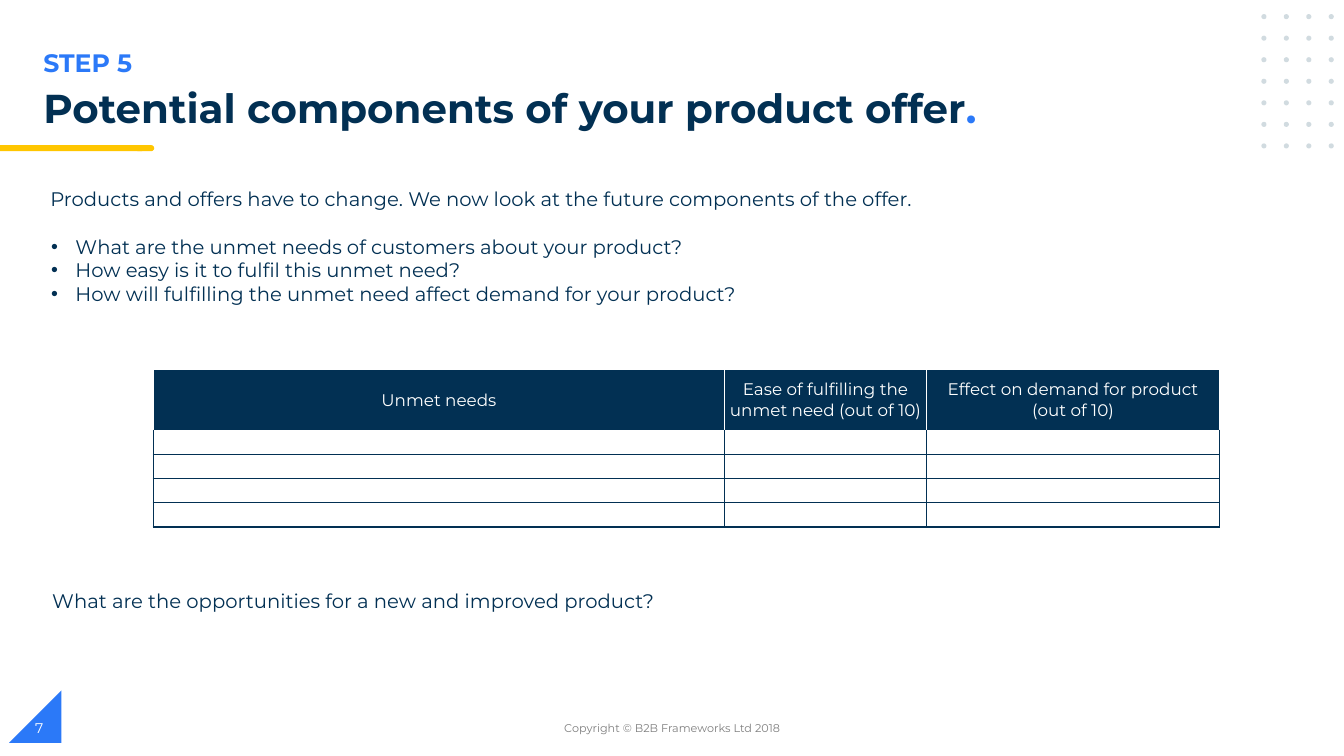
from dataclasses import dataclass
from itertools import product

from lxml import etree
from pptx import Presentation
from pptx import util as u
from pptx.dml.color import RGBColor
from pptx.enum import shapes, text
from pptx.oxml import ns


@dataclass(frozen=True)
class Theme:
    font: str = "Montserrat"
    navy: str = "023053"
    blue: str = "2B79F8"
    yellow: str = "FFC600"
    dots: str = "D1DBE0"
    grey: str = "7F7F7F"
    white: str = "FFFFFF"
    title: float = 28.8
    step: float = 18
    body: float = 14
    header: float = 12
    number: float = 10
    copyright: float = 8


THEME = Theme()
WIDTH, HEIGHT = u.Inches(13.33), u.Inches(7.5)

STEP = "STEP 5"
TITLE = ("Potential components of your product offer", ".")
INTRO = "Products and offers have to change. We now look at the future components of the offer."
QUESTIONS = [
    "What are the unmet needs of customers about your product?",
    "How easy is it to fulfil this unmet need?",
    "How will fulfilling the unmet need affect demand for your product?",
]
HEADERS = [
    ["Unmet needs"],
    ["Ease of fulfilling the unmet need (out of 10)"],
    ["Effect on demand for product", "(out of 10)"],
]
CLOSING = "What are the opportunities for a new and improved product?"
COPYRIGHT = "Copyright © B2B Frameworks Ltd 2018"
NUMBER = "7"

PLACES = {
    "step": (2.48, 5.6, 50.17, 5.33),
    "title": (2.48, 10.93, 90.98, 7.47),
    "intro": (3, 24.13, 79.5, 17.07),
    "table": (11.4, 48.8, 79.36, 20.93),
    "closing": (3.15, 77.2, 67.73, 4.53),
    "copyright": (33.15, 93.6, 33.75, 5.33),
    "number": (1.88, 93.6, 22.5, 5.33),
    "corner": (0.68, 91.33, 3.9, 6.93),
    "rule_end": (10.05, 19.2, 1.43, 0.8),
    "rule": (0, 19.2, 10.58, 0.8),
}
COLUMN_SHARES = (42.53, 15, 21.83)
ROW_SHARES = (8.13, 3.2, 3.2, 3.2, 3.2)
DOT_COLUMNS, DOT_ROWS = 4, 7
DOT_START, DOT_PITCH, DOT_SIZE = (93.85, 1.87), (1.67, 2.85), (0.38, 0.67)


def across(share):
    return round(WIDTH * share / 100)


def down(share):
    return round(HEIGHT * share / 100)


def spot(place):
    left, top, width, height = place
    return across(left), down(top), across(width), down(height)


def assign(target, values):
    for key, value in values.items():
        setattr(target, key, value)


def write(paragraph, words, size, color, bold=False):
    run = paragraph.add_run()
    run.text = words
    assign(run.font, {"name": THEME.font, "size": u.Pt(size), "bold": bold})
    run.font.color.rgb = RGBColor.from_string(color)


def add_mark(slide, preset, place, color):
    mark = slide.shapes.add_shape(preset, *spot(place))
    mark.shadow.inherit = False
    mark.fill.solid()
    mark.fill.fore_color.rgb = RGBColor.from_string(color)
    mark.line.fill.background()
    return mark


def add_label(slide, part, words, size, color, bold=False, middle=False, align=None):
    frame = slide.shapes.add_textbox(*spot(PLACES[part])).text_frame
    anchor = text.MSO_ANCHOR.MIDDLE if middle else text.MSO_ANCHOR.TOP
    assign(frame, {"word_wrap": True, "vertical_anchor": anchor})
    frame.paragraphs[0].alignment = align
    write(frame.paragraphs[0], words, size, color, bold)
    return frame


def add_bullet(paragraph):
    properties = paragraph._p.get_or_add_pPr()
    properties.set("marL", str(u.Inches(0.25)))
    properties.set("indent", str(u.Inches(-0.24)))
    color = etree.SubElement(properties, ns.qn("a:buClr"))
    etree.SubElement(color, ns.qn("a:srgbClr"), val=THEME.navy)
    etree.SubElement(properties, ns.qn("a:buFont"), typeface="Arial")
    etree.SubElement(properties, ns.qn("a:buChar"), char="•")


def add_borders(cell, colors):
    properties = cell._tc.get_or_add_tcPr()
    for side, color in zip("LRTB", colors):
        line = etree.SubElement(properties, ns.qn(f"a:ln{side}"), w=str(u.Pt(1)))
        fill = etree.SubElement(line, ns.qn("a:solidFill"))
        etree.SubElement(fill, ns.qn("a:srgbClr"), val=color)


def add_decoration(slide):
    corner = add_mark(slide, shapes.MSO_SHAPE.RIGHT_TRIANGLE, PLACES["corner"], THEME.blue)
    corner._element.spPr.find(ns.qn("a:xfrm")).set("flipH", "1")
    for row, column in product(range(DOT_ROWS), range(DOT_COLUMNS)):
        left = DOT_START[0] + column * DOT_PITCH[0]
        top = DOT_START[1] + row * DOT_PITCH[1]
        add_mark(slide, shapes.MSO_SHAPE.OVAL, (left, top, *DOT_SIZE), THEME.dots)
    add_mark(slide, shapes.MSO_SHAPE.FLOWCHART_TERMINATOR, PLACES["rule_end"], THEME.yellow)
    add_mark(slide, shapes.MSO_SHAPE.RECTANGLE, PLACES["rule"], THEME.yellow)


def add_title(slide):
    title = slide.shapes.title
    assign(title, dict(zip(("left", "top", "width", "height"), spot(PLACES["title"]))))
    assign(title.text_frame, {
        "word_wrap": True,
        "auto_size": text.MSO_AUTO_SIZE.NONE,
        "vertical_anchor": text.MSO_ANCHOR.MIDDLE,
    })
    heading = title.text_frame.paragraphs[0]
    assign(heading, {"alignment": text.PP_ALIGN.LEFT, "line_spacing": 0.9})
    for words, color in zip(TITLE, (THEME.navy, THEME.blue)):
        write(heading, words, THEME.title, color, True)


def add_intro(slide):
    frame = add_label(slide, "intro", INTRO, THEME.body, THEME.navy)
    for index, question in enumerate(QUESTIONS):
        paragraph = frame.add_paragraph()
        add_bullet(paragraph)
        if index == 0:
            paragraph.space_before = u.Pt(17)
        write(paragraph, question, THEME.body, THEME.navy)


def add_needs(slide):
    size = len(ROW_SHARES), len(COLUMN_SHARES)
    needs = slide.shapes.add_table(*size, *spot(PLACES["table"])).table
    assign(needs, {"first_row": False, "horz_banding": False})
    for column, share in zip(needs.columns, COLUMN_SHARES):
        column.width = across(share)
    for row, share in zip(needs.rows, ROW_SHARES):
        row.height = down(share)
    for row, column in product(*map(range, size)):
        cell = needs.cell(row, column)
        edge = THEME.navy if row else THEME.white
        top = THEME.navy if row > 1 else THEME.white
        add_borders(cell, (edge, edge, top, edge))
        assign(cell, {
            "margin_left": u.Inches(0.01),
            "margin_right": u.Inches(0.01),
            "margin_top": u.Inches(0.01),
            "margin_bottom": 0,
            "vertical_anchor": text.MSO_ANCHOR.MIDDLE,
        })
        paragraph = cell.text_frame.paragraphs[0]
        if row:
            cell.fill.background()
            etree.SubElement(paragraph._p, ns.qn("a:endParaRPr"), sz=str(THEME.number * 100))
            continue
        cell.fill.solid()
        cell.fill.fore_color.rgb = RGBColor.from_string(THEME.navy)
        paragraph.alignment = text.PP_ALIGN.CENTER
        for index, line in enumerate(HEADERS[column]):
            if index:
                paragraph.add_line_break()
            write(paragraph, line, THEME.header, THEME.white)


def main():
    deck = Presentation()
    assign(deck, {"slide_width": WIDTH, "slide_height": HEIGHT})
    slide = deck.slides.add_slide(deck.slide_layouts[5])
    add_decoration(slide)
    add_label(slide, "step", STEP, THEME.step, THEME.blue, bold=True)
    add_title(slide)
    add_intro(slide)
    add_needs(slide)
    add_label(slide, "closing", CLOSING, THEME.body, THEME.navy)
    add_label(slide, "copyright", COPYRIGHT, THEME.copyright, THEME.grey,
              middle=True, align=text.PP_ALIGN.CENTER)
    add_label(slide, "number", NUMBER, THEME.number, THEME.white, middle=True)
    deck.save("out.pptx")


if __name__ == "__main__":
    main()
